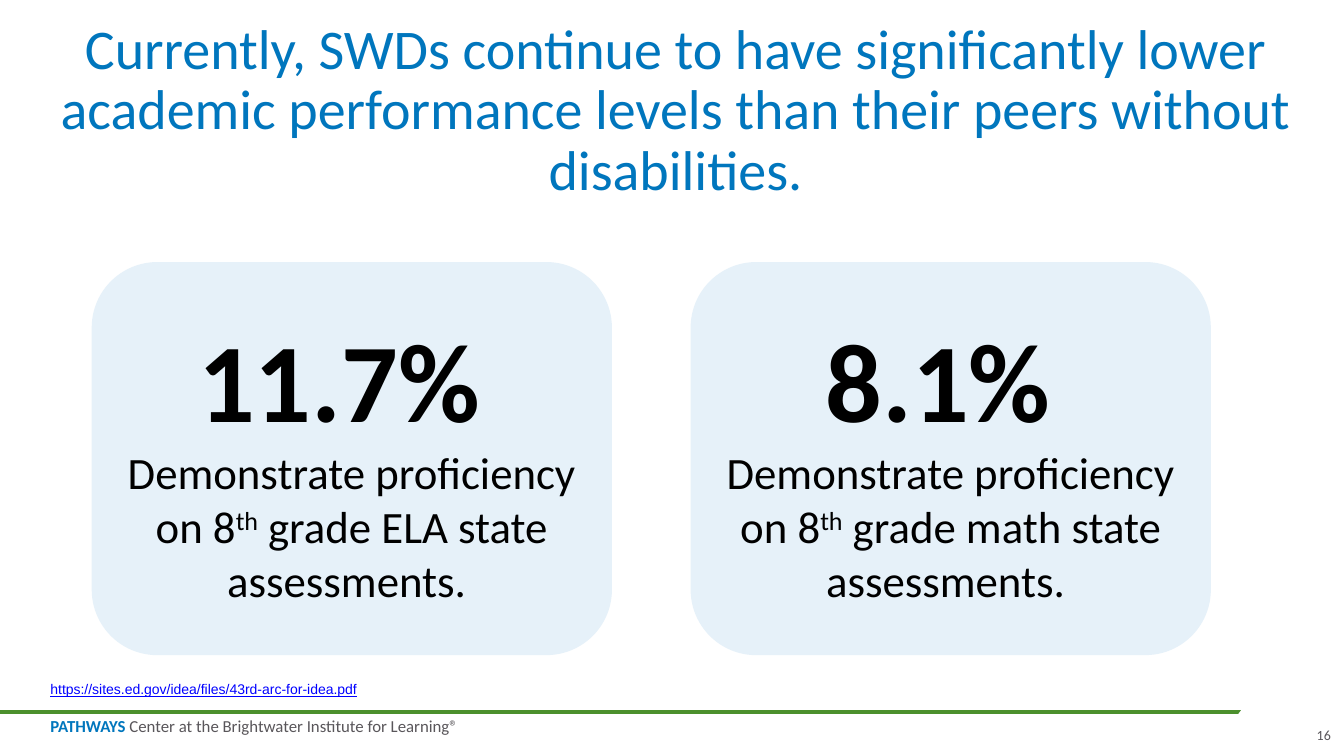
"""Build the slide on academic performance levels of SWDs."""
import pptx
import pptx.dml.color
import pptx.enum.shapes
import pptx.enum.text
import pptx.oxml.ns
import pptx.util
from lxml import etree

PX = 9144
COLORS = {"blue": "0076BD", "green": "4C902D", "gray": "59565A", "card": "E6F1F9",
          "link": "0000FF", "black": "000000", "white": "FFFFFF"}
ALIGN = pptx.enum.text.PP_ALIGN
ANCHOR = pptx.enum.text.MSO_ANCHOR
SHAPE = pptx.enum.shapes.MSO_SHAPE


def px(*lengths):
    """Turn px lengths into EMU."""
    return [n * PX for n in lengths]


def rgb(name):
    """Look up a palette colour."""
    return pptx.dml.color.RGBColor.from_string(COLORS[name])


def set_font(font, size, color, bold=False, name="Calibri"):
    """Set the typeface, size, colour and weight of a font."""
    font.name = name
    font.size = pptx.util.Pt(size)
    font.bold = bold
    font.color.rgb = rgb(color)


def set_frame(tf, anchor, wrap=True):
    """Remove the margins of a text frame and set its anchor and wrapping."""
    tf.margin_left = tf.margin_top = tf.margin_right = tf.margin_bottom = 0
    tf.auto_size = pptx.enum.text.MSO_AUTO_SIZE.NONE
    tf.vertical_anchor = anchor
    tf.word_wrap = wrap


def add_text(s, box, text, size, color, align=ALIGN.LEFT, anchor=ANCHOR.BOTTOM,
             wrap=True, name="Calibri"):
    """Add a text box of one paragraph and return the paragraph."""
    tf = s.shapes.add_textbox(*px(*box)).text_frame
    set_frame(tf, anchor, wrap)
    p = tf.paragraphs[0]
    p.text = text
    p.alignment = align
    set_font(p.font, size, color, name=name)
    return p


def add_filled(s, kind, box, color):
    """Add a preset shape with a plain fill and no outline."""
    sp = s.shapes.add_shape(kind, *px(*box))
    sp.shadow.inherit = False
    sp.fill.solid()
    sp.fill.fore_color.rgb = rgb(color)
    sp.line.fill.background()
    return sp


def add_title(s, box, text):
    """Place and format the title placeholder."""
    sp = s.shapes.title
    sp.left, sp.top, sp.width, sp.height = px(*box)
    set_frame(sp.text_frame, ANCHOR.BOTTOM)
    p = sp.text_frame.paragraphs[0]
    p.text = text
    p.alignment = ALIGN.CENTER
    p.line_spacing = 0.9
    set_font(p.font, 40, "blue")


def add_rule(s, y, right, color):
    """Add the horizontal footer rule."""
    line = s.shapes.add_connector(
        pptx.enum.shapes.MSO_CONNECTOR.STRAIGHT, *px(0, y, right, y))
    line.line.color.rgb = rgb(color)
    line.line.width = pptx.util.Pt(3)
    etree.SubElement(line._element.spPr, pptx.oxml.ns.qn("a:effectLst"))


def add_card(s, left, percent, subject):
    """Add a rounded card with a large percentage over its description."""
    sp = add_filled(s, SHAPE.ROUNDED_RECTANGLE, (left, 260, 516, 390), "card")
    tf = sp.text_frame
    tf.word_wrap = True
    tf.vertical_anchor = ANCHOR.MIDDLE
    figure, detail = tf.paragraphs[0], tf.add_paragraph()
    figure.text = f"{percent} "
    for text in ("Demonstrate proficiency on 8", "th",
                 f" grade {subject} state assessments. "):
        r = detail.add_run()
        r.text = text
        if text == "th":
            r._r.get_or_add_rPr().set("baseline", "30000")
    for p, size, bold in ((figure, 80, True), (detail, 32, False)):
        p.alignment = ALIGN.CENTER
        set_font(p.font, size, "black", bold)


def add_footer(s):
    """Add the rule, its cut end, the organisation line and the slide number."""
    add_rule(s, 706, 1300, "green")
    add_filled(s, SHAPE.OVAL, (1216, 677, 119, 58), "white").rotation = 332.1
    p = add_text(s, (50, 713, 402, 17), "PATHWAYS", 12, "gray",
                 anchor=ANCHOR.TOP, wrap=False)
    p.line_spacing = 0.85
    set_font(p.runs[0].font, 12, "blue", True)
    p.add_run().text = " Center at the Brightwater Institute for Learning®"
    add_text(s, (1303, 720, 17, 17), "16", 10, "gray", ALIGN.RIGHT, wrap=False)


def main():
    """Build and save the slide."""
    prs = pptx.Presentation()
    prs.slide_width, prs.slide_height = px(1333, 750)
    s = prs.slides.add_slide(prs.slide_layouts[5])
    add_footer(s)
    add_title(s, (50, 80, 1240, 121),
              "Currently, SWDs continue to have significantly lower academic "
              "performance levels than their peers without disabilities.")
    for i, (percent, subject) in enumerate((("11.7%", "ELA"), ("8.1%", "math"))):
        add_card(s, 91 + i * 594, percent, subject)
    source = add_text(s, (50, 671, 1240, 21),
                      "https://sites.ed.gov/idea/files/43rd-arc-for-idea.pdf",
                      10, "link", name="Arial")
    source.font.underline = True
    prs.save("out.pptx")


if __name__ == "__main__":
    main()
